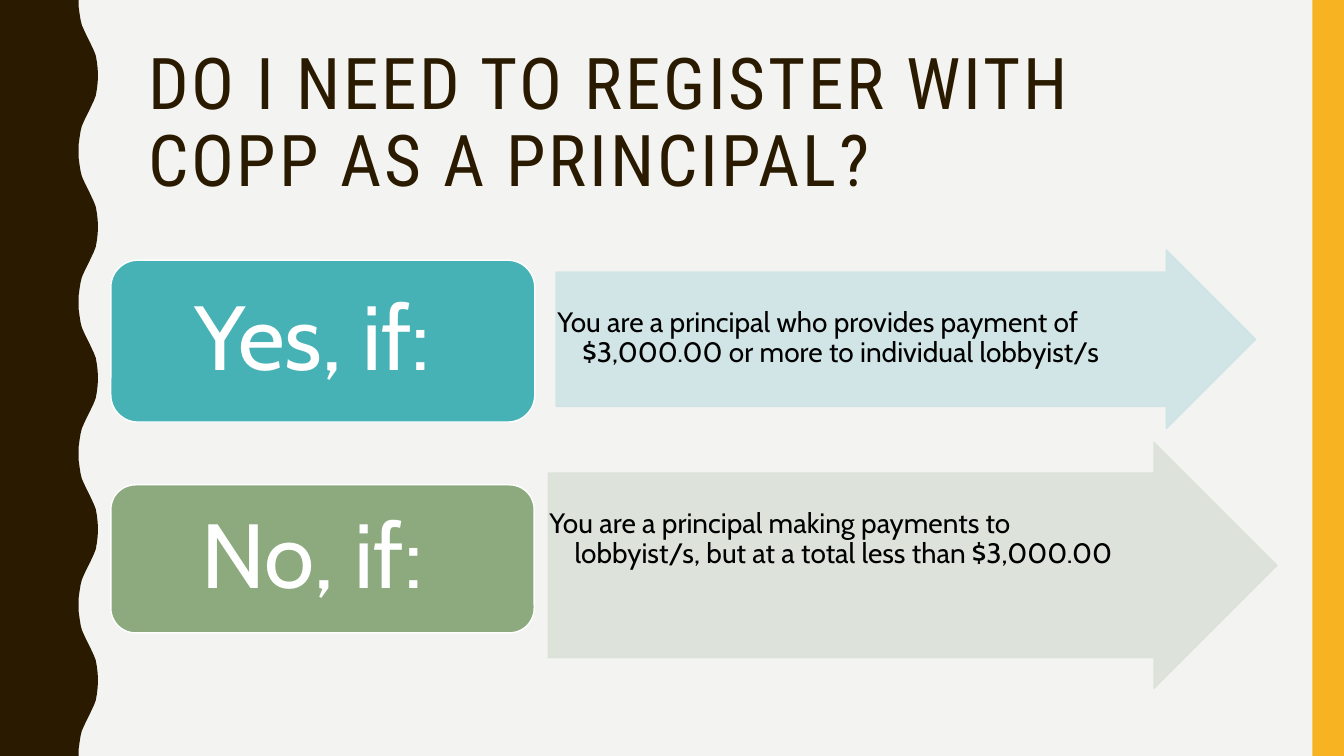
from pptx import Presentation
from pptx.dml.color import RGBColor
from pptx.enum.shapes import MSO_SHAPE as SHAPE
from pptx.enum.text import MSO_ANCHOR as ANCHOR, MSO_AUTO_SIZE as AUTOSIZE, PP_ALIGN as ALIGN
from pptx.oxml.ns import qn
from pptx.util import Pt
from lxml import etree


def paint(s, fill, line=None):
    s.shadow.inherit = False
    s.fill.solid()
    s.fill.fore_color.rgb = RGBColor.from_string(fill)
    if line:
        s.line.color.rgb = RGBColor.from_string(line)
        s.line.width = Pt(1)
    else:
        s.line.fill.background()


def write(s, text, font, size, color, align, anchor, insets):
    tf = s.text_frame
    tf.text = text
    tf.word_wrap = True
    tf.auto_size = AUTOSIZE.NONE
    tf.vertical_anchor = anchor
    tf.margin_left, tf.margin_top, tf.margin_right, tf.margin_bottom = map(Pt, insets)
    p = tf.paragraphs[0]
    p.alignment = align
    p.line_spacing = 0.9
    r = p.runs[0]
    r.font.name = font
    r.font.size = Pt(size)
    r.font.color.rgb = RGBColor.from_string(color)
    return p


prs = Presentation()
prs.slide_width, prs.slide_height = Pt(960), Pt(540)
slide = prs.slides.add_slide(prs.slide_layouts[5])
slide.background.fill.solid()
slide.background.fill.fore_color.rgb = RGBColor.from_string("F3F3F2")

swell = [(56.2, 0), (56.2, 5), (56.9, 10), (57.6, 14.4), (58.5, 18), (59.8, 21),
         (61.2, 24), (62.7, 27), (64.2, 30), (65.6, 33), (67, 36), (68.4, 39.6),
         (69.2, 44), (69.8, 49), (70, 54)]
period = 108
wave = swell + [(x, period - y) for x, y in reversed(swell[1:-1])]
edge = [(x, y + period * i) for i in range(5) for x, y in wave]
builder = slide.shapes.build_freeform(0, 0, scale=Pt(1) / 100)
points = edge + [(56.2, 540), (0, 540)]
builder.add_line_segments([(round(x * 100), round(y * 100)) for x, y in points], close=True)
paint(builder.convert_to_shape(), "2A1A00")

bar = slide.shapes.add_shape(SHAPE.RECTANGLE, Pt(937.5), Pt(0), Pt(22.5), Pt(540))
paint(bar, "F8B323")

title = slide.shapes.title
title.left, title.top, title.width, title.height = Pt(98.6), Pt(30.2), Pt(800.6), Pt(117.4)
p = write(title, "DO I NEED TO REGISTER WITH COPP AS A PRINCIPAL?", "Roboto Condensed", 51,
          "2A1A00", ALIGN.LEFT, ANCHOR.MIDDLE, (7.2, 3.6, 7.2, 3.6))
p.runs[0].font._element.set("spc", "200")

answers = [
    ("Yes, if: ", (79.2, 185.9, 302.8, 115.6), "46B2B5",
     "You are a principal who provides payment of $3,000.00 or more to individual lobbyist/s",
     (397.2, 178.4, 499.8, 127.8), "CFE4E5", 32),
    ("No, if: ", (79.2, 346.3, 302.4, 105.8), "8CAA7E",
     "You are a principal making payments to lobbyist/s, but at a total less than $3,000.00",
     (391.6, 316, 520.6, 175.7), "DBE2D8", 44),
]
for label, label_box, label_fill, reason, arrow_box, arrow_fill, right_inset in answers:
    arrow = slide.shapes.add_shape(SHAPE.RIGHT_ARROW, *map(Pt, arrow_box))
    arrow.adjustments[0] = 0.75
    arrow.adjustments[1] = 0.5
    paint(arrow, arrow_fill, arrow_fill)
    for clr in arrow._element.spPr.iter(qn("a:srgbClr")):
        etree.SubElement(clr, qn("a:alpha")).set("val", "90000")
    p = write(arrow, reason, "Cabin", 20, "000000", ALIGN.LEFT, ANCHOR.TOP,
              (0.9, 26, right_inset, 0.9))
    pPr = p._p.get_or_add_pPr()
    pPr.set("marL", str(Pt(18)))
    pPr.set("indent", str(-Pt(18)))

    s = slide.shapes.add_shape(SHAPE.ROUNDED_RECTANGLE, *map(Pt, label_box))
    paint(s, label_fill, "FFFFFF")
    write(s, label, "Cabin", 65, "FFFFFF", ALIGN.CENTER, ANCHOR.MIDDLE, (19.4, 10, 19.4, 10))

prs.save("out.pptx")
